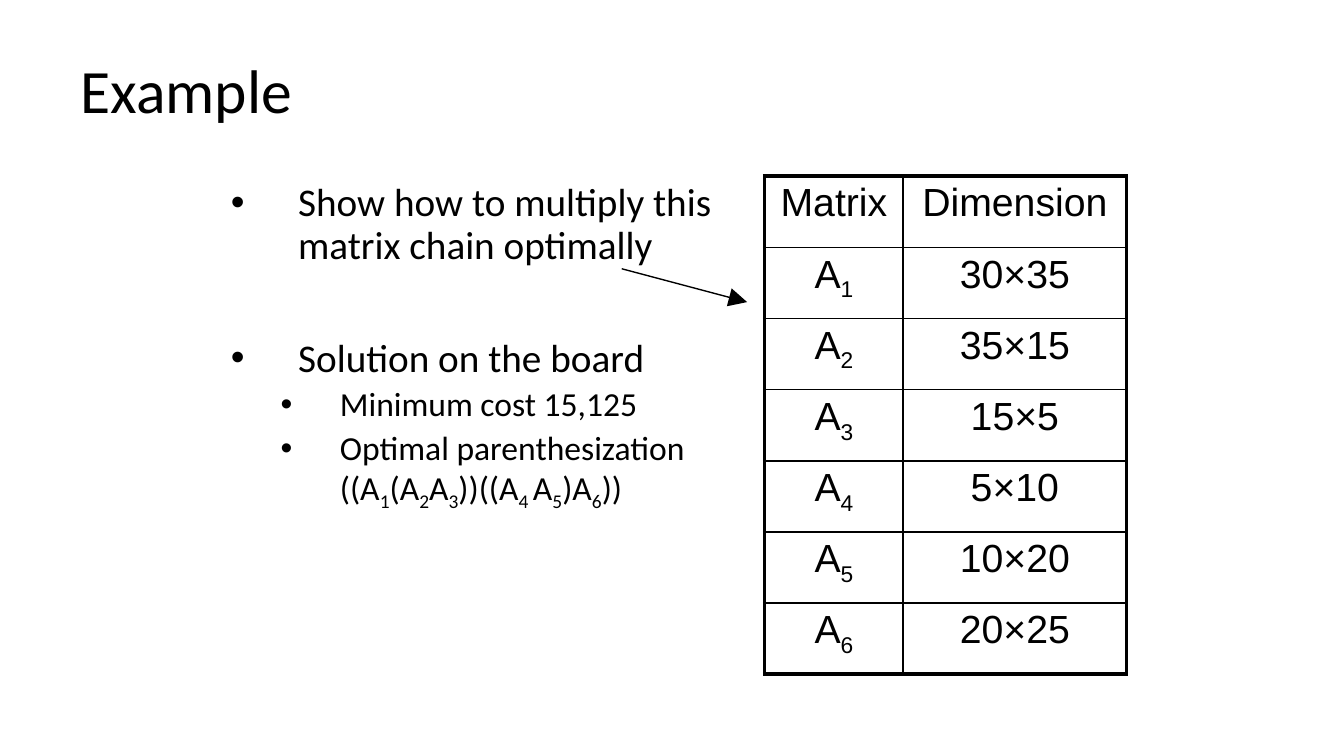
"""Build a slide with a matrix chain multiplication example."""
from lxml.etree import SubElement
from pptx import Presentation
from pptx.dml.color import RGBColor
from pptx.enum.shapes import MSO_CONNECTOR
from pptx.enum.text import MSO_ANCHOR, MSO_AUTO_SIZE, PP_ALIGN
from pptx.oxml import parse_xml
from pptx.oxml.ns import nsdecls, qn
from pptx.util import Cm, Pt

BLACK = "000000"


def color(hex_text):
    """Turn a hex string into a colour."""
    return RGBColor.from_string(hex_text)


def add_runs(paragraph, text, size, font_name):
    """Add text run by run; every second part between bars is a subscript."""
    for index, part in enumerate(text.split("|")):
        if not part:
            continue
        run = paragraph.add_run()
        run.text = part
        run.font.size = Pt(size)
        run.font.name = font_name
        run.font.color.rgb = color(BLACK)
        if index % 2:
            run.font._element.set("baseline", "-25000")


presentation = Presentation()
presentation.slide_width = Cm(25.4)
presentation.slide_height = Cm(14.29)
slide = presentation.slides.add_slide(presentation.slide_layouts[1])

title = slide.shapes.title
title.left, title.top, title.width, title.height = Cm(1.27), Cm(0.58), Cm(22.86), Cm(2.39)
title.text_frame.vertical_anchor = MSO_ANCHOR.MIDDLE
title.text_frame.auto_size = MSO_AUTO_SIZE.NONE
paragraph = title.text_frame.paragraphs[0]
paragraph.alignment = PP_ALIGN.LEFT
paragraph.line_spacing = 0.9
add_runs(paragraph, "Example", 33, "Calibri")

body = slide.placeholders[1]
body.left, body.top, body.width, body.height = Cm(4.11), Cm(3.33), Cm(9.86), Cm(9.42)
body.text_frame.auto_size = MSO_AUTO_SIZE.NONE
items = [
    ("Show how to multiply this matrix chain optimally", 0, 7.5),
    ("Solution on the board", 0, 38),
    ("Minimum cost 15,125", 1, 3.8),
    ("Optimal parenthesization ((A|1|(A|2|A|3|))((A|4 |A|5|)A|6|))", 1, 3.8),
]
level_formats = [(21, Cm(1.27), Cm(-1.27)), (18, Cm(2.06), Cm(-1.12))]
for index, (text, level, space_before) in enumerate(items):
    size, margin, indent = level_formats[level]
    paragraph = body.text_frame.paragraphs[0] if index == 0 else body.text_frame.add_paragraph()
    paragraph.level = level
    paragraph.line_spacing = 0.9
    paragraph.space_before = Pt(space_before)
    add_runs(paragraph, text, size, "Calibri")
    properties = paragraph._p.get_or_add_pPr()
    properties.set("marL", str(margin))
    properties.set("indent", str(indent))
    SubElement(properties, qn("a:buFont")).set("typeface", "Arial")
    SubElement(properties, qn("a:buChar")).set("char", "•")

dimensions = ["30×35", "35×15", "15×5", "5×10", "10×20", "20×25"]
rows = [("Matrix", "Dimension")]
rows += [(f"A|{number}|", dimension) for number, dimension in enumerate(dimensions, 1)]
last_row = len(rows) - 1
table = slide.shapes.add_table(
    len(rows), 2, Cm(14.45), Cm(3.33), Cm(6.84), Cm(9.42)
).table
table.first_row = False
table.horz_banding = False
table.columns[0].width = Cm(2.62)
table.columns[1].width = Cm(4.22)
for row_index, row in enumerate(rows):
    for column_index, text in enumerate(row):
        cell = table.cell(row_index, column_index)
        cell.margin_left = cell.margin_right = Cm(0.18)
        cell.margin_top = cell.margin_bottom = Cm(0.1)
        cell.fill.background()
        paragraph = cell.text_frame.paragraphs[0]
        paragraph.alignment = PP_ALIGN.CENTER
        add_runs(paragraph, text, 21, "Arial")
        outer_edges = {
            "lnL": column_index == 0,
            "lnR": column_index == 1,
            "lnT": row_index == 0,
            "lnB": row_index == last_row,
        }
        for position, (edge, is_outer) in enumerate(outer_edges.items()):
            width = Pt(2.25 if is_outer else 1)
            border = parse_xml(
                f'<a:{edge} {nsdecls("a")} w="{width}"><a:solidFill>'
                f'<a:srgbClr val="{BLACK}"/></a:solidFill></a:{edge}>'
            )
            cell._tc.get_or_add_tcPr().insert(position, border)

arrow = slide.shapes.add_connector(
    MSO_CONNECTOR.STRAIGHT, Cm(11.75), Cm(5.08), Cm(14.12), Cm(5.71)
)
arrow.line.color.rgb = color(BLACK)
arrow.line.width = Pt(0.75)
tail = SubElement(arrow.line._get_or_add_ln(), qn("a:tailEnd"))
tail.set("type", "triangle")
tail.set("w", "lg")
tail.set("len", "lg")
SubElement(arrow._element.spPr, qn("a:effectLst"))

presentation.save("out.pptx")
